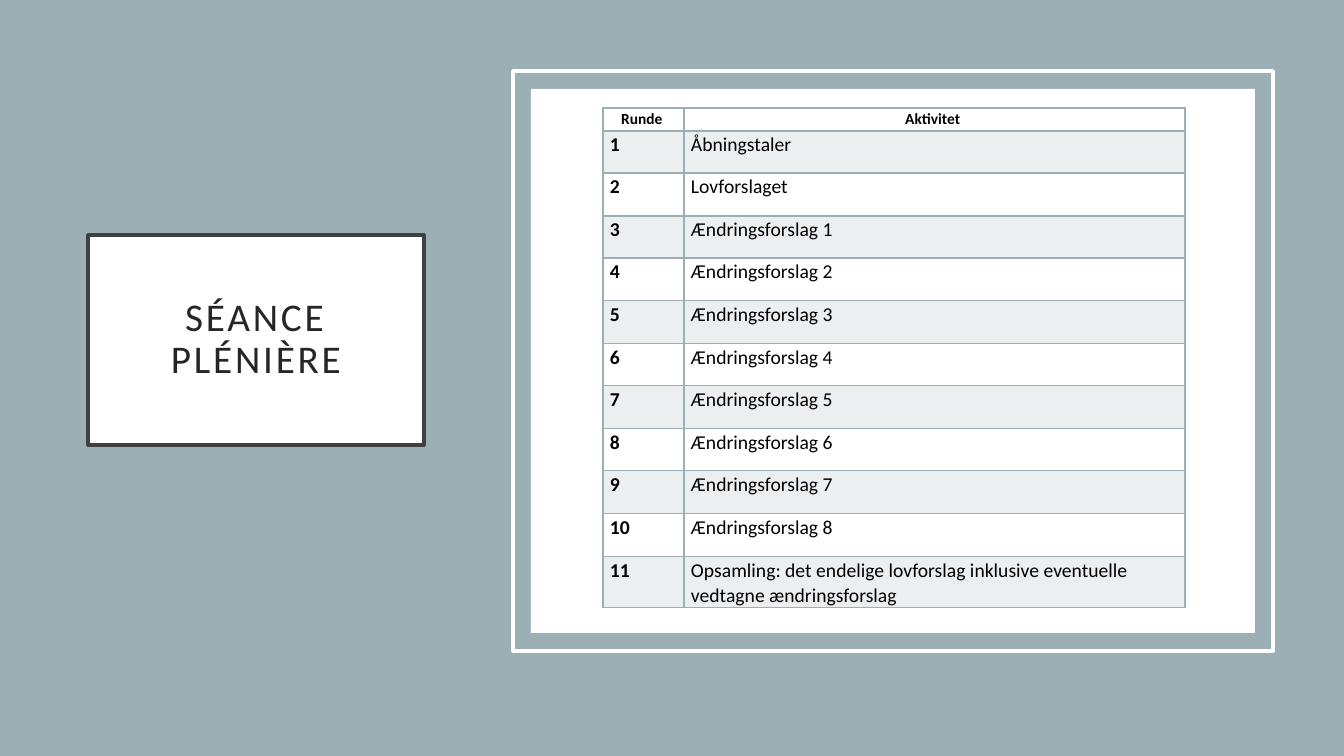
from dataclasses import dataclass

from lxml.etree import SubElement
from pptx import Presentation
from pptx.dml.color import RGBColor
from pptx.enum.shapes import MSO_SHAPE
from pptx.enum.text import MSO_ANCHOR, PP_ALIGN
from pptx.oxml.ns import qn
from pptx.util import Pt

SCALE = 914400 / 100.8


@dataclass(frozen=True)
class Theme:
    font: str = "Calibri"
    sage: str = "9BAFB5"
    white: str = "FFFFFF"
    edge: str = "404040"
    ink: str = "262626"
    black: str = "000000"
    title: int = 28
    head: int = 11
    body: int = 14
    line: float = 2.5


THEME = Theme()
ROUNDS = [
    "Åbningstaler",
    "Lovforslaget",
    *[f"Ændringsforslag {num}" for num in range(1, 9)],
    "Opsamling: det endelige lovforslag inklusive eventuelle vedtagne ændringsforslag",
]


def px(size):
    return round(size * SCALE)


def add_rect(slide, box, fill=None, line=None):
    rect = slide.shapes.add_shape(MSO_SHAPE.RECTANGLE, *map(px, box))
    rect.shadow.inherit = False
    if fill:
        rect.fill.solid()
        rect.fill.fore_color.rgb = RGBColor.from_string(fill)
    else:
        rect.fill.background()
    if line:
        rect.line.color.rgb = RGBColor.from_string(line)
        rect.line.width = Pt(THEME.line)
    else:
        rect.line.fill.background()
    return rect


def add_run(para, text, size, color, bold=False):
    run = para.add_run()
    run.text = text
    run.font.name = THEME.font
    run.font.size = Pt(size)
    run.font.bold = bold
    run.font.color.rgb = RGBColor.from_string(color)
    return run


def add_title(slide, box):
    frame = add_rect(slide, box, THEME.white, THEME.edge).text_frame
    frame.word_wrap = True
    frame.vertical_anchor = MSO_ANCHOR.MIDDLE
    frame.margin_left = frame.margin_right = px(30)
    frame.margin_top = frame.margin_bottom = px(20)
    para = frame.paragraphs[0]
    para.alignment = PP_ALIGN.CENTER
    para.line_spacing = 0.9
    run = add_run(para, "SÉANCE PLÉNIÈRE", THEME.title, THEME.ink)
    run.font._element.set("spc", "200")


def set_edges(cell, base):
    props = cell._tc.get_or_add_tcPr()
    for side, width in zip("LRTB", (1, 1, 1, base)):
        edge = SubElement(props, qn(f"a:ln{side}"), w=str(Pt(width)))
        fill = SubElement(edge, qn("a:solidFill"))
        SubElement(fill, qn("a:srgbClr"), val=THEME.sage)


def set_fill(cell, shade):
    if not shade:
        cell.fill.background()
        return
    cell.fill.solid()
    cell.fill.fore_color.rgb = RGBColor.from_string(THEME.sage)
    color = cell._tc.tcPr.find(f"{qn('a:solidFill')}/{qn('a:srgbClr')}")
    SubElement(color, qn("a:alpha"), val="20000")


def fill_cell(cell, text, row, bold):
    head = row == 0
    set_edges(cell, 2 if head else 1)
    set_fill(cell, row % 2)
    cell.margin_left = cell.margin_right = px(7)
    cell.margin_top = cell.margin_bottom = 0
    para = cell.text_frame.paragraphs[0]
    para.alignment = PP_ALIGN.CENTER if head else PP_ALIGN.LEFT
    para.line_spacing = 1.07
    para.space_before = Pt(0 if head else 12)
    para.space_after = Pt(8)
    add_run(para, text, THEME.head if head else THEME.body, THEME.black, bold)


def add_rounds(slide, box):
    rows = [("Runde ", "Aktivitet ")]
    rows += [(str(num), text) for num, text in enumerate(ROUNDS, 1)]
    table = slide.shapes.add_table(len(rows), 2, *map(px, box)).table
    table.first_row = table.horz_banding = False
    first, last, lead = 23, 51, 81
    count = len(rows) - 2
    span = box[3] - first - last
    steps = [(i + 1) * span // count - i * span // count for i in range(count)]
    for line, height in zip(table.rows, [first, *steps, last]):
        line.height = px(height)
    for col, width in zip(table.columns, (lead, box[2] - lead)):
        col.width = px(width)
    for row, texts in enumerate(rows):
        for col, text in enumerate(texts):
            fill_cell(table.cell(row, col), text, row, row == 0 or col == 0)


def add_panel(slide, box):
    left, top, width, height = box
    gap = 18
    add_rect(slide, box, line=THEME.white)
    inner = (left + gap, top + gap, width - 2 * gap, height - 2 * gap)
    add_rect(slide, inner, THEME.white)
    add_rounds(slide, (left + 90, top + 37, 582, 500))


def main():
    deck = Presentation()
    deck.slide_width, deck.slide_height = px(1344), px(756)
    slide = deck.slides.add_slide(deck.slide_layouts[6])
    add_rect(slide, (0, 0, 1344, 756), THEME.sage)
    add_title(slide, (88, 235, 336, 210))
    add_panel(slide, (513, 71, 760, 580))
    deck.save("out.pptx")


if __name__ == "__main__":
    main()
